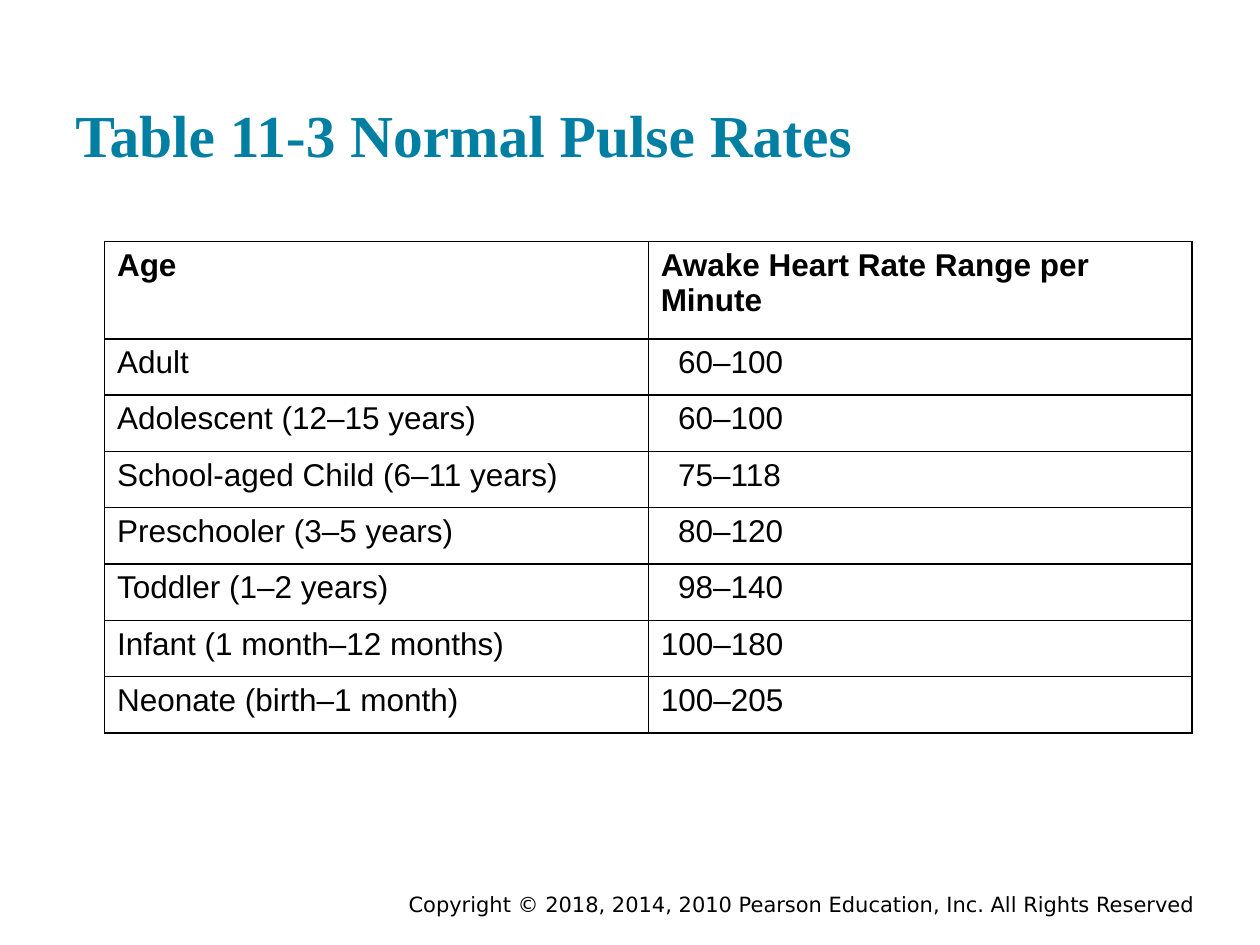
import pptx
import pptx.dml.color
import pptx.enum.text
import pptx.util
from lxml import etree
from pptx.oxml.ns import qn

Cm, Pt = pptx.util.Cm, pptx.util.Pt
ALIGN, ANCHOR = pptx.enum.text.PP_ALIGN, pptx.enum.text.MSO_ANCHOR

COLORS = {"title": "007FA3", "text": "000000", "border": "000000", "cell": "FFFFFF"}
HEADER = ("Age", "Awake Heart Rate Range per Minute")
PULSE_RATES = [
    ("Adult", "60–100"),
    ("Adolescent (12–15 years)", "60–100"),
    ("School-aged Child (6–11 years)", "75–118"),
    ("Preschooler (3–5 years)", "80–120"),
    ("Toddler (1–2 years)", "98–140"),
    ("Infant (1 month–12 months)", "100–180"),
    ("Neonate (birth–1 month)", "100–205"),
]
CELL_MARGIN = 0.25
DIGIT_INDENT = 0.35  # lines two-digit rates up with three-digit ones


def rgb(name):
    return pptx.dml.color.RGBColor.from_string(COLORS[name])


def add_run(p, text, font, size, color="text", bold=False):
    r = p.add_run()
    r.text = text
    r.font.name, r.font.size, r.font.bold = font, Pt(size), bold
    r.font.color.rgb = rgb(color)


def place_title(s, x, y, w, h):
    sp = s.shapes.title
    sp.left, sp.top, sp.width, sp.height = Cm(x), Cm(y), Cm(w), Cm(h)
    tf = sp.text_frame
    tf.auto_size = pptx.enum.text.MSO_AUTO_SIZE.NONE
    tf.word_wrap = True
    tf.vertical_anchor = ANCHOR.BOTTOM
    tf.margin_left = tf.margin_right = tf.margin_top = tf.margin_bottom = Cm(0.25)
    p = tf.paragraphs[0]
    p.alignment = ALIGN.LEFT
    add_run(p, "Table 11-3 Normal Pulse Rates", "Times New Roman", 34, "title", True)


def add_borders(cell):
    # Border elements come before the fill in the cell properties
    tcPr = cell._tc.get_or_add_tcPr()
    for i, side in enumerate(("lnL", "lnR", "lnT", "lnB")):
        ln = etree.Element(qn(f"a:{side}"), w=str(Pt(1)))
        fill = etree.SubElement(ln, qn("a:solidFill"))
        etree.SubElement(fill, qn("a:srgbClr"), val=COLORS["border"])
        tcPr.insert(i, ln)


def add_rate_table(s, x, y, w, h, header_h):
    rows = [HEADER] + PULSE_RATES
    table = s.shapes.add_table(len(rows), 2, Cm(x), Cm(y), Cm(w), Cm(h)).table
    table.first_row = table.horz_banding = False
    for col in table.columns:
        col.width = Cm(w / 2)
    for i, row in enumerate(rows):
        table.rows[i].height = Cm(header_h if i == 0 else (h - header_h) / len(PULSE_RATES))
        for j, text in enumerate(row):
            cell = table.cell(i, j)
            cell.fill.solid()
            cell.fill.fore_color.rgb = rgb("cell")
            add_borders(cell)
            short_rate = i > 0 and j == 1 and text.index("–") == 2
            cell.margin_left = Cm(CELL_MARGIN + (DIGIT_INDENT if short_rate else 0))
            add_run(cell.text_frame.paragraphs[0], text, "Arial", 18, bold=i == 0)


def add_copyright(s, x, y, w, h):
    tf = s.shapes.add_textbox(Cm(x), Cm(y), Cm(w), Cm(h)).text_frame
    tf.word_wrap = True
    tf.vertical_anchor = ANCHOR.MIDDLE
    p = tf.paragraphs[0]
    p.alignment = ALIGN.RIGHT
    add_run(p, "Copyright © 2018, 2014, 2010 Pearson Education, Inc. All Rights Reserved",
            "DejaVu Sans", 12)


def main():
    prs = pptx.Presentation()
    prs.slide_width, prs.slide_height = Cm(25.4), Cm(19.05)
    s = prs.slides.add_slide(prs.slide_layouts[5])
    add_copyright(s, 7.42, 17.91, 16.92, 0.64)
    place_title(s, 1.27, 0.61, 23.22, 3.05)
    add_rate_table(s, 2.11, 4.87, 21.92, 9.91, 1.96)
    prs.save("out.pptx")


if __name__ == "__main__":
    main()
